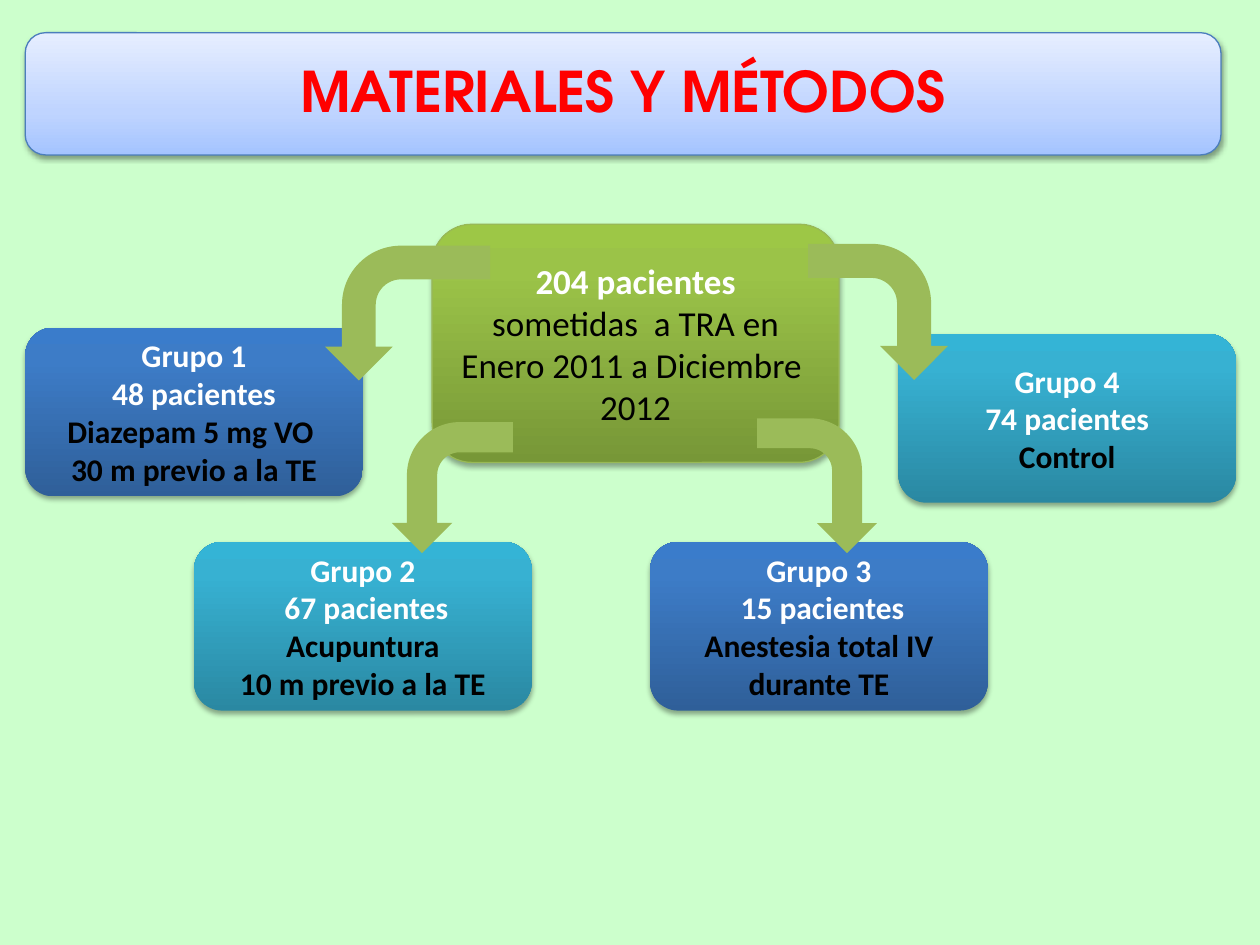
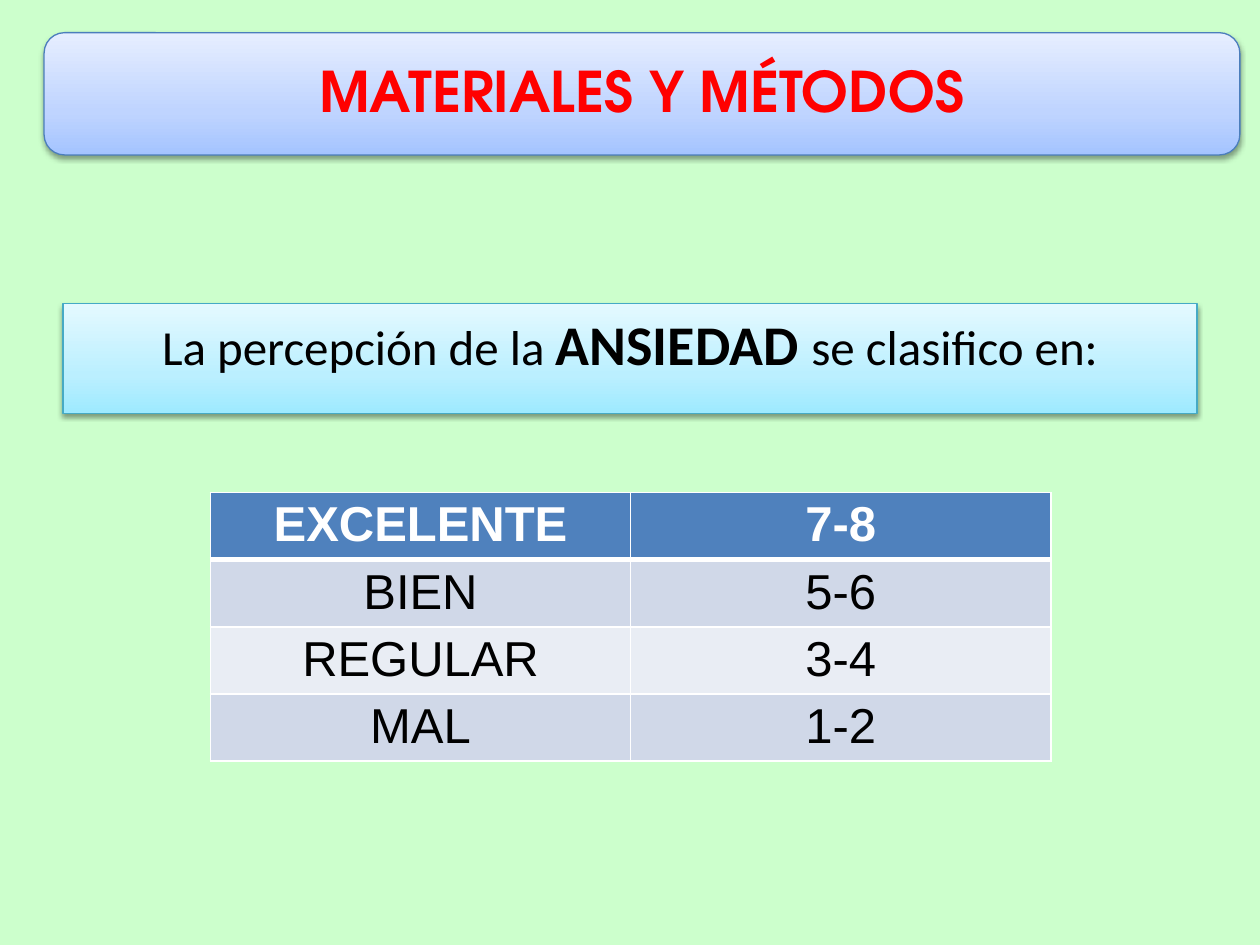
from dataclasses import dataclass

from lxml import etree
from pptx import Presentation
from pptx.dml.color import RGBColor
from pptx.enum.shapes import MSO_SHAPE
from pptx.enum.text import MSO_ANCHOR, PP_ALIGN
from pptx.oxml.ns import qn
from pptx.util import Inches, Pt

CENTER = PP_ALIGN.CENTER
MIDDLE, TOP = MSO_ANCHOR.MIDDLE, MSO_ANCHOR.TOP
ROUNDED, RECTANGLE = MSO_SHAPE.ROUNDED_RECTANGLE, MSO_SHAPE.RECTANGLE
BANNER, BENT_ARROW = MSO_SHAPE.FLOWCHART_ALTERNATE_PROCESS, MSO_SHAPE.BENT_ARROW


@dataclass(frozen=True)
class Theme:
    background: str = "CCFFCC"
    white: str = "FFFFFF"
    black: str = "000000"
    title: str = "FF0000"
    arrow: str = "9BBB59"
    table_header: str = "4F81BD"
    table_bands: tuple = ("D0D8E8", "E9EDF4")
    green: tuple = ((0, "779737"), (80, "9BC348"), (100, "9DC746"))
    teal: tuple = ((0, "2A88A2"), (80, "37B1D2"), (100, "34B4D6"))
    blue: tuple = ((0, "2F5F99"), (80, "3D7CC7"), (100, "3A7CCB"))
    pale_blue: tuple = ((0, "A4C4FF"), (35, "BFD4FF"), (100, "E6EEFF"))
    pale_teal: tuple = ((0, "9EEAFF"), (35, "BBEFFF"), (100, "E4F9FF"))
    green_line: str = "98B955"
    blue_line: str = "4B7EBC"
    teal_line: str = "46AAC5"
    body_font: str = "Calibri"
    title_font: str = "TeX Gyre Adventor"
    table_font: str = "Arial"
    title_size: int = 32
    lead_size: int = 28
    cohort_size: int = 20
    group_size: int = 18


THEME = Theme()


def rgb(value):
    return RGBColor.from_string(value)


def put_text(frame, paragraphs, *, size, font=THEME.body_font, color=THEME.black,
             bold=False, anchor=MIDDLE, wrap=True, before=0):
    frame.word_wrap = wrap
    frame.vertical_anchor = anchor
    for index, runs in enumerate(paragraphs):
        paragraph = frame.paragraphs[0] if index == 0 else frame.add_paragraph()
        paragraph.alignment = CENTER
        paragraph.space_before = Pt(before)
        for text, changes in runs:
            run = paragraph.add_run()
            run.text = text
            run.font.name = font
            run.font.size = Pt(changes.get("size", size))
            run.font.bold = changes.get("bold", bold)
            run.font.color.rgb = rgb(changes.get("color", color))


def add_color(parent, value):
    return etree.SubElement(parent, qn("a:srgbClr"), val=value)


def add_panel(slide, kind, box, stops, line=None, opacity=35, distance=1.8):
    panel = slide.shapes.add_shape(kind, *map(Inches, box))
    panel.fill.gradient()
    panel.fill.gradient_angle = 90
    properties = panel.element.spPr
    stop_list = properties.find(qn("a:gradFill")).find(qn("a:gsLst"))
    stop_list[:] = []
    for position, value in stops:
        add_color(etree.SubElement(stop_list, qn("a:gs"), pos=str(position * 1000)), value)
    if line:
        panel.line.color.rgb = rgb(line)
        panel.line.width = Pt(0.75)
    else:
        panel.line.fill.background()
    panel.shadow.inherit = False
    shadow = etree.SubElement(
        properties.find(qn("a:effectLst")), qn("a:outerShdw"), blurRad=str(Pt(3.1)),
        dist=str(Pt(distance)), dir="5400000", rotWithShape="0")
    etree.SubElement(add_color(shadow, THEME.black), qn("a:alpha"), val=str(opacity * 1000))
    return panel


def add_title(slide, left):
    banner = add_panel(slide, BANNER, (left, 0.26, 9.49, 0.97), THEME.pale_blue,
                       THEME.blue_line, opacity=38, distance=1.6)
    banner.text_frame.margin_bottom = Inches(0.11)
    put_text(banner.text_frame, [[("MATERIALES Y MÉTODOS", {})]], size=THEME.title_size,
             font=THEME.title_font, color=THEME.title, bold=True, wrap=False)


def add_cohort(slide, box):
    cohort = add_panel(slide, ROUNDED, box, THEME.green, THEME.green_line)
    put_text(cohort.text_frame, [
        [("204 pacientes", {"color": THEME.white, "bold": True})],
        [("sometidas  a TRA en Enero 2011 a Diciembre  2012", {})],
    ], size=THEME.cohort_size)


def add_group(slide, left, top, stops, heading, treatment):
    group = add_panel(slide, ROUNDED, (left, top, 2.68, 1.34), stops)
    lines = [[(text, {"color": THEME.white})] for text in heading]
    lines += [[(text, {})] for text in treatment]
    put_text(group.text_frame, lines, size=THEME.group_size, bold=True)


def add_bent_arrow(slide, box, rotation, flips=()):
    arrow = slide.shapes.add_shape(BENT_ARROW, *map(Inches, box))
    arrow.rotation = rotation
    for flip in flips:
        arrow.element.spPr.xfrm.set(flip, "1")
    arrow.fill.solid()
    arrow.fill.fore_color.rgb = rgb(THEME.arrow)
    arrow.line.fill.background()
    arrow.shadow.inherit = False


def set_borders(cell, bottom=1):
    properties = cell._tc.get_or_add_tcPr()
    widths = {"a:lnL": 1, "a:lnR": 1, "a:lnT": 1, "a:lnB": bottom}
    for index, (side, width) in enumerate(widths.items()):
        border = etree.Element(qn(side), w=str(Pt(width)))
        add_color(etree.SubElement(border, qn("a:solidFill")), THEME.white)
        properties.insert(index, border)


def add_score_table(slide, box, scores):
    table = slide.shapes.add_table(len(scores), 2, *map(Inches, box)).table
    table.horz_banding = False
    for row, values in enumerate(scores):
        header = row == 0
        fill = THEME.table_header if header else THEME.table_bands[(row - 1) % 2]
        for column, value in enumerate(values):
            cell = table.cell(row, column)
            cell.margin_top = cell.margin_bottom = Inches(0.04)
            cell.fill.solid()
            cell.fill.fore_color.rgb = rgb(fill)
            set_borders(cell, 3 if header or row == 0 else 1)
            put_text(cell.text_frame, [[(value, {})]], size=THEME.lead_size,
                     font=THEME.table_font, bold=header, anchor=TOP,
                     color=THEME.white if header else THEME.black)


def new_slide(deck):
    slide = deck.slides.add_slide(deck.slide_layouts[6])
    slide.background.fill.solid()
    slide.background.fill.fore_color.rgb = rgb(THEME.background)
    return slide


def build_groups_slide(deck):
    slide = new_slide(deck)
    add_cohort(slide, (3.43, 1.78, 3.23, 1.89))
    groups = [
        (1.54, 4.3, THEME.teal, ("Grupo 2", " 67 pacientes"),
         ("Acupuntura", "10 m previo a la TE")),
        (0.2, 2.6, THEME.blue, ("Grupo 1", "48 pacientes"),
         ("Diazepam 5 mg VO ", "30 m previo a la TE")),
        (5.16, 4.3, THEME.blue, ("Grupo 3", " 15 pacientes"),
         ("Anestesia total IV durante TE",)),
        (7.13, 2.65, THEME.teal, ("Grupo 4", "74 pacientes"), ("Control",)),
    ]
    for group in groups:
        add_group(slide, *group)
    add_title(slide, 0.2)
    add_bent_arrow(slide, (2.7, 1.83, 1.07, 1.31), 270, ("flipH",))
    add_bent_arrow(slide, (5.95, 3.38, 1.07, 0.95), 90)
    add_bent_arrow(slide, (6.43, 1.92, 1.08, 1.11), 270, ("flipH", "flipV"))
    add_bent_arrow(slide, (3.07, 3.39, 1.04, 0.96), 270, ("flipH",))


def build_anxiety_slide(deck):
    slide = new_slide(deck)
    lead = add_panel(slide, RECTANGLE, (0.5, 2.41, 9, 0.87), THEME.pale_teal,
                     THEME.teal_line, opacity=38, distance=1.6)
    put_text(lead.text_frame, [[
        ("La percepción de la ", {}),
        ("ANSIEDAD ", {"size": THEME.title_size, "bold": True}),
        ("se clasifico en:", {}),
    ]], size=THEME.lead_size, anchor=TOP, before=6)
    add_title(slide, 0.35)
    add_score_table(slide, (1.67, 3.91, 6.67, 2.13), [
        ("EXCELENTE", "7-8"), ("BIEN", "5-6"), ("REGULAR", "3-4"), ("MAL", "1-2")])


def main():
    deck = Presentation()
    deck.slide_width, deck.slide_height = Inches(10), Inches(7.5)
    build_groups_slide(deck)
    build_anxiety_slide(deck)
    deck.save("out.pptx")


if __name__ == "__main__":
    main()
